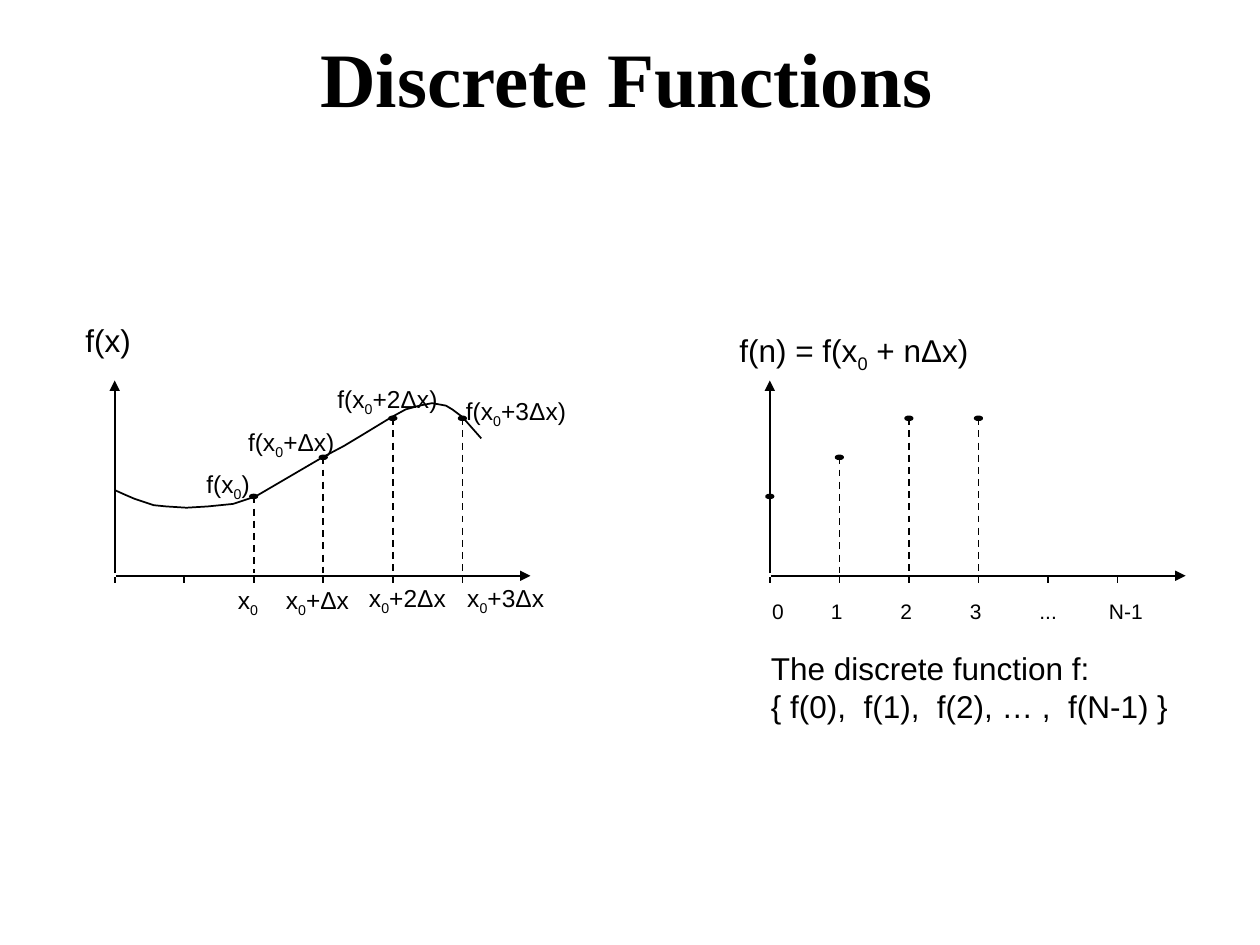
from lxml import etree
from pptx import Presentation
from pptx.dml.color import RGBColor
from pptx.enum.dml import MSO_LINE
from pptx.enum.shapes import MSO_CONNECTOR, MSO_SHAPE
from pptx.enum.text import MSO_ANCHOR, MSO_AUTO_SIZE, PP_ALIGN
from pptx.oxml.ns import qn
from pptx.util import Inches, Pt

STRAIGHT = MSO_CONNECTOR.STRAIGHT
DASH = MSO_LINE.DASH
ELLIPSE = MSO_SHAPE.OVAL
MIDDLE = MSO_ANCHOR.MIDDLE
TOP = MSO_ANCHOR.TOP
FIXED = MSO_AUTO_SIZE.NONE
CENTER = PP_ALIGN.CENTER

COLUMNS = 100
TICK_STEP = 5.52
TICK_COUNT = 6
LEFT_ORIGIN, RIGHT_ORIGIN = 9.1, 61.1
AXIS_ROW = 45.7
SAMPLE_ROWS = [39.4, 36.3, 33.2, 33.2]
CURVE = [
    (9.1, 38.9), (10, 39.3), (10.7, 39.6), (12.2, 40.1), (13.2, 40.2),
    (14.8, 40.3), (16.5, 40.2), (18.5, 40), (20.3, 39.4), (25.6, 36.3),
    (27.3, 35.4), (28.8, 34.5), (31.1, 33.1), (32.2, 32.5), (33.3, 32.2),
    (34.3, 32), (35.4, 32.2), (35.9, 32.5), (36.7, 33.1), (38.2, 34.8),
]
LABELS = [
    ("f(x)", 5.8, 25, 5.6, 18),
    ("f(x|0|)", 15.4, 36.7, 5.6, 14),
    ("f(x|0|+Δx)", 18.7, 33.4, 8.9, 14),
    ("f(x|0|+2Δx)", 25.8, 30, 10, 14),
    ("f(x|0|+3Δx)", 36, 30.9, 10, 14),
    ("x|0", 17.9, 45.9, 3.7, 14),
    ("x|0|+Δx", 21.7, 45.9, 7, 14),
    ("x|0|+2Δx", 28.3, 45.8, 8.1, 14),
    ("x|0|+3Δx", 36.1, 45.8, 8.1, 14),
    ("f(n) = f(x|0| + nΔx)", 57.7, 25.8, 20.3, 18),
    ("The discrete function f:\n{ f(0),  f(1),  f(2), … ,  f(N-1) }", 60.2, 51, 33.8, 18),
]


def color(value):
    return RGBColor.from_string(value)


class Sketch:
    ink = "000000"
    body_font = "Arial"
    title_font = "Times New Roman"

    def __init__(self, presentation):
        self.unit = presentation.slide_width / COLUMNS
        self.slide = presentation.slides.add_slide(presentation.slide_layouts[5])

    def span(self, count):
        return round(count * self.unit)

    def style_font(self, font, size, name, bold=False):
        font.size, font.name, font.bold = Pt(size), name, bold
        font.color.rgb = color(self.ink)

    def style_line(self, shape):
        shape.line.color.rgb = color(self.ink)
        shape.line.width = Pt(1)

    def title(self, text, left, top, width, height):
        shape = self.slide.shapes.title
        shape.left, shape.top = self.span(left), self.span(top)
        shape.width, shape.height = self.span(width), self.span(height)
        frame = shape.text_frame
        frame.text = text
        frame.auto_size, frame.vertical_anchor = FIXED, MIDDLE
        paragraph = frame.paragraphs[0]
        paragraph.alignment = CENTER
        self.style_font(paragraph.font, 44, self.title_font, True)

    def label(self, text, left, top, width, size):
        lines = text.split("\n")
        height = 1 + len(lines) * size / 6
        shape = self.slide.shapes.add_textbox(*map(self.span, (left, top, width, height)))
        frame = shape.text_frame
        frame.word_wrap, frame.vertical_anchor = False, TOP
        for index, line in enumerate(lines):
            paragraph = frame.add_paragraph() if index else frame.paragraphs[0]
            self.style_font(paragraph.font, size, self.body_font)
            for position, part in enumerate(line.split("|")):
                run = paragraph.add_run()
                run.text = part
                if position % 2:
                    run.font._element.set("baseline", "-25000")
        return shape

    def tabbed_label(self, words, left, top, width, size, first_stop, step):
        shape = self.label("\t".join(words), left, top, width, size)
        shape.text_frame.word_wrap = True
        paragraph = shape.text_frame.paragraphs[0]
        paragraph.line_spacing = 1.8
        stops = etree.Element(qn("a:tabLst"))
        for index in range(len(words) - 1):
            position = self.span(first_stop + index * step)
            etree.SubElement(stops, qn("a:tab"), pos=str(position), algn="l")
        properties = paragraph._p.get_or_add_pPr()
        properties.find(qn("a:defRPr")).addprevious(stops)

    def line(self, start, end, arrow=False, dashed=False, shapes=None):
        shapes = self.slide.shapes if shapes is None else shapes
        connector = shapes.add_connector(STRAIGHT, *map(self.span, start + end))
        self.style_line(connector)
        if dashed:
            connector.line.dash_style = DASH
        if arrow:
            etree.SubElement(connector.line._get_or_add_ln(), qn("a:tailEnd"), type="triangle")
        etree.SubElement(connector._element.spPr, qn("a:effectLst"))

    def dot(self, x, y):
        box = map(self.span, (x - 0.3, y - 0.15, 0.6, 0.3))
        shape = self.slide.shapes.add_shape(ELLIPSE, *box)
        shape.shadow.inherit = False
        shape.fill.solid()
        shape.fill.fore_color.rgb = color(self.ink)
        self.style_line(shape)

    def curve(self, points):
        points = [(self.span(x), self.span(y)) for x, y in points]
        builder = self.slide.shapes.build_freeform(*points[0])
        builder.add_line_segments(points[1:], close=False)
        shape = builder.convert_to_shape()
        shape.shadow.inherit = False
        shape.fill.background()
        self.style_line(shape)

    def axes(self, origin):
        self.line((origin, 45.5), (origin, 30.2), arrow=True)
        self.line((origin + 0.1, AXIS_ROW), (origin + 33, AXIS_ROW), arrow=True)
        ticks = self.slide.shapes.add_group_shape()
        for index in range(TICK_COUNT):
            x = origin + index * TICK_STEP
            self.line((x, 45.8), (x, 46.3), shapes=ticks.shapes)

    def samples(self, origin, first_tick):
        for index, row in enumerate(SAMPLE_ROWS, first_tick):
            x = origin + index * TICK_STEP
            self.dot(x, row)
            if index:
                self.line((x, row), (x, 45.5), dashed=True)


def main():
    presentation = Presentation()
    presentation.slide_width, presentation.slide_height = Inches(10), Inches(7.5)
    sketch = Sketch(presentation)
    sketch.title("Discrete Functions", 5.6, 1.9, 88.3, 8.4)
    for origin, first_tick in ((LEFT_ORIGIN, 2), (RIGHT_ORIGIN, 0)):
        sketch.axes(origin)
        sketch.samples(origin, first_tick)
    sketch.curve(CURVE)
    for label in LABELS:
        sketch.label(*label)
    words = ["0", "1", "2", "3", "...", "N-1"]
    sketch.tabbed_label(words, 60.3, 45.4, 32.1, 12, 4.65, TICK_STEP)
    presentation.save("out.pptx")


if __name__ == "__main__":
    main()
